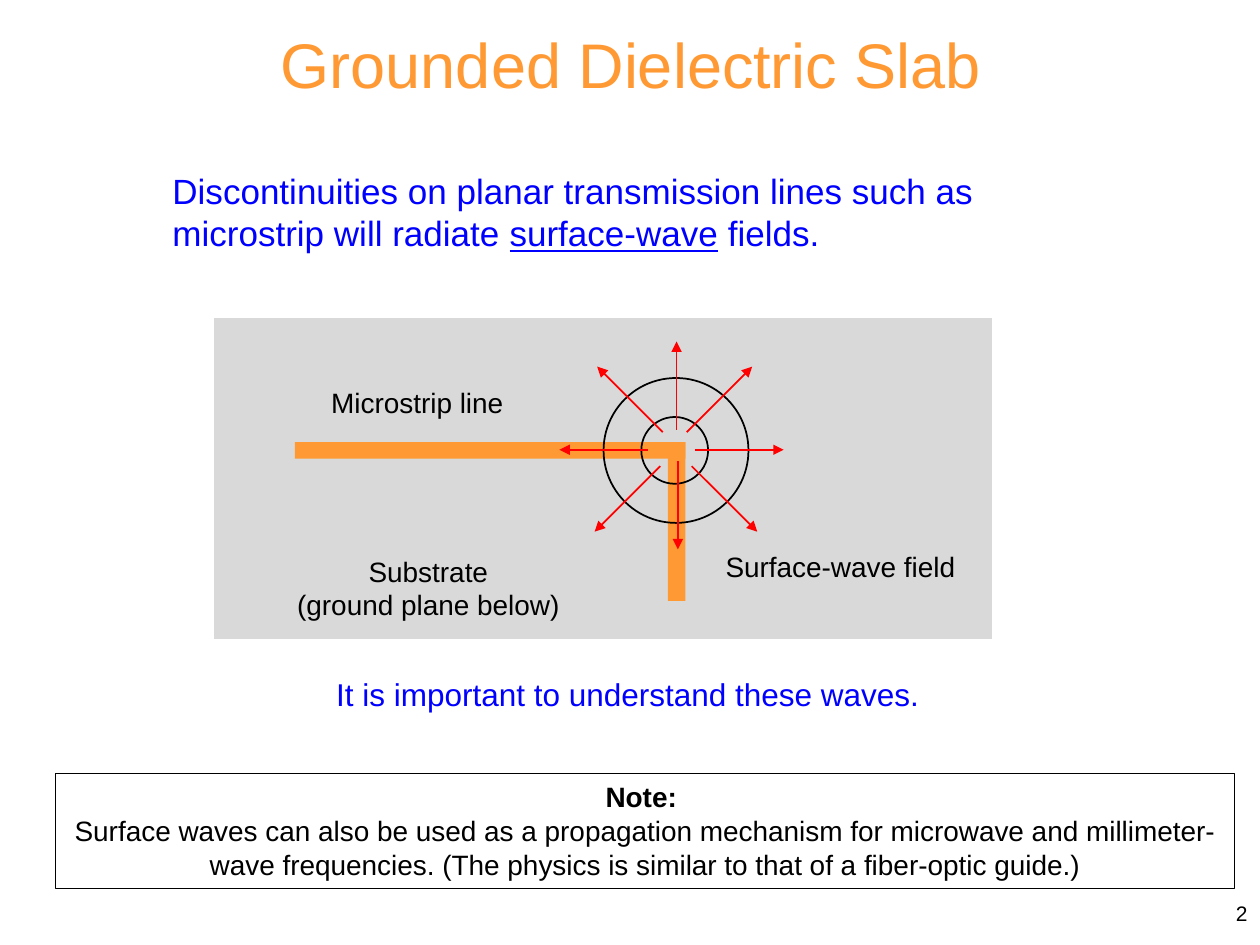
import pptx
import pptx.util
import pptx.dml.color
from pptx.enum.shapes import MSO_CONNECTOR, MSO_SHAPE
from pptx.enum.text import MSO_ANCHOR, PP_ALIGN
from pptx.oxml.ns import qn
from lxml import etree

Inches = pptx.util.Inches
Pt = pptx.util.Pt

COLORS = {
    "orange": "FF9933",
    "blue": "0000FF",
    "black": "000000",
    "gray": "D9D9D9",
    "white": "FFFFFF",
    "red": "FF0000",
}


def rgb(name):
    return pptx.dml.color.RGBColor.from_string(COLORS[name])


def write(shape, paras, size=16, color="black", align=PP_ALIGN.LEFT,
          anchor=MSO_ANCHOR.TOP, wrap=True):
    """Fill a shape with paragraphs, each a list of (text, style) runs."""
    frame = shape.text_frame
    frame.word_wrap = wrap
    frame.vertical_anchor = anchor
    for i, runs in enumerate(paras):
        para = frame.add_paragraph() if i else frame.paragraphs[0]
        para.alignment = align
        for text, style in runs:
            run = para.add_run()
            run.text = text
            font = run.font
            font.name = "Arial"
            font.size = Pt(size)
            font.color.rgb = rgb(color)
            font.bold = style == "bold"
            font.underline = style == "under"


def label(shapes, box, lines, **form):
    text = shapes.add_textbox(*map(Inches, box))
    write(text, [[(line, "")] for line in lines], **form)


def block(shapes, kind, box, fill=None, line=None, width=1):
    shape = shapes.add_shape(kind, *map(Inches, box))
    shape.shadow.inherit = False
    if fill:
        shape.fill.solid()
        shape.fill.fore_color.rgb = rgb(fill)
    else:
        shape.fill.background()
    if line:
        shape.line.color.rgb = rgb(line)
        shape.line.width = Pt(width)
    else:
        shape.line.fill.background()
    return shape


def arrow(shapes, x, y, dx, dy):
    line = shapes.add_connector(MSO_CONNECTOR.STRAIGHT, Inches(x), Inches(y),
                                Inches(x + dx), Inches(y + dy))
    line.line.color.rgb = rgb("red")
    line.line.width = Pt(1)
    etree.SubElement(line.line._get_or_add_ln(), qn("a:tailEnd"), type="triangle")
    etree.SubElement(line._element.spPr, qn("a:effectLst"))


def heading(slide, x, y, w, h):
    title = slide.shapes.title
    title.left, title.top, title.width, title.height = map(Inches, (x, y, w, h))
    write(title, [[("Grounded Dielectric Slab", "")]], size=36, color="orange")


def intro(slide, x, y, w, h):
    text = slide.shapes.add_textbox(*map(Inches, (x, y, w, h)))
    write(text, [[
        ("Discontinuities on planar transmission lines such as "
         "microstrip will radiate ", ""),
        ("surface-wave", "under"),
        (" fields.", ""),
    ]], size=20, color="blue")


def waves(shapes, x, y):
    """Draw the wave fronts and outward arrows around the bend at x, y."""
    for left, top, size in ((-0.28, -0.26, 0.53), (-0.58, -0.57, 1.15)):
        block(shapes, MSO_SHAPE.OVAL, (x + left, y + top, size, size), line="black")
    starts = {
        (1, -1): (0.08, -0.14), (-1, -1): (-0.11, -0.14),
        (-1, 1): (-0.13, 0.13), (1, 1): (0.12, 0.13),
        (1, 0): (0.15, 0), (-1, 0): (-0.23, 0),
        (0, -1): (0, -0.16), (0, 1): (0.01, 0.09),
    }
    for (right, down), (dx, dy) in starts.items():
        reach = 0.52 if right and down else 0.7
        arrow(shapes, x + dx, y + dy, right * reach, down * reach)


def diagram(slide, x, y, w, h):
    """Draw the substrate with a bent microstrip line and its waves."""
    shapes = slide.shapes.add_group_shape().shapes
    rect = MSO_SHAPE.RECTANGLE
    block(shapes, rect, (x, y, w, h), fill="gray", line="white")
    block(shapes, rect, (x + 0.65, y + 0.99, 3.1, 0.13), fill="orange")
    block(shapes, rect, (x + 3.61, y + 0.99, 0.14, 1.26), fill="orange")
    label(shapes, (x + 0.21, y + 1.83, 3, 0.64),
          ["Substrate", "(ground plane below)"], align=PP_ALIGN.CENTER)
    label(shapes, (x + 0.84, y + 0.49, 1.59, 0.37), ["Microstrip line"], wrap=False)
    waves(shapes, x + 3.68, y + 1.05)
    label(shapes, (x + 3.97, y + 1.79, 2.05, 0.37), ["Surface-wave field"], wrap=False)


def note(slide, x, y, w, h):
    shape = block(slide.shapes, MSO_SHAPE.RECTANGLE, (x, y, w, h),
                  line="black", width=0.75)
    write(shape, [
        [("Note: ", "bold")],
        [("Surface waves can also be used as a propagation mechanism for "
          "microwave and millimeter-wave frequencies. (The physics is similar "
          "to that of a fiber-optic guide.)", "")],
    ], align=PP_ALIGN.CENTER)


def main():
    deck = pptx.Presentation()
    deck.slide_width, deck.slide_height = Inches(10), Inches(7.5)
    slide = deck.slides.add_slide(deck.slide_layouts.get_by_name("Title Only"))
    heading(slide, 2.13, 0.15, 5.78, 0.7)
    intro(slide, 1.27, 1.3, 7.59, 0.77)
    diagram(slide, 1.69, 2.52, 6.19, 2.56)
    label(slide.shapes, (2.57, 5.31, 4.87, 0.4),
          ["It is important to understand these waves."],
          size=18, color="blue", wrap=False)
    note(slide, 0.44, 6.14, 9.36, 0.91)
    label(slide.shapes, (7.92, 7, 2.08, 0.5), ["2"], size=12,
          align=PP_ALIGN.RIGHT, anchor=MSO_ANCHOR.MIDDLE)
    deck.save("out.pptx")


if __name__ == "__main__":
    main()
